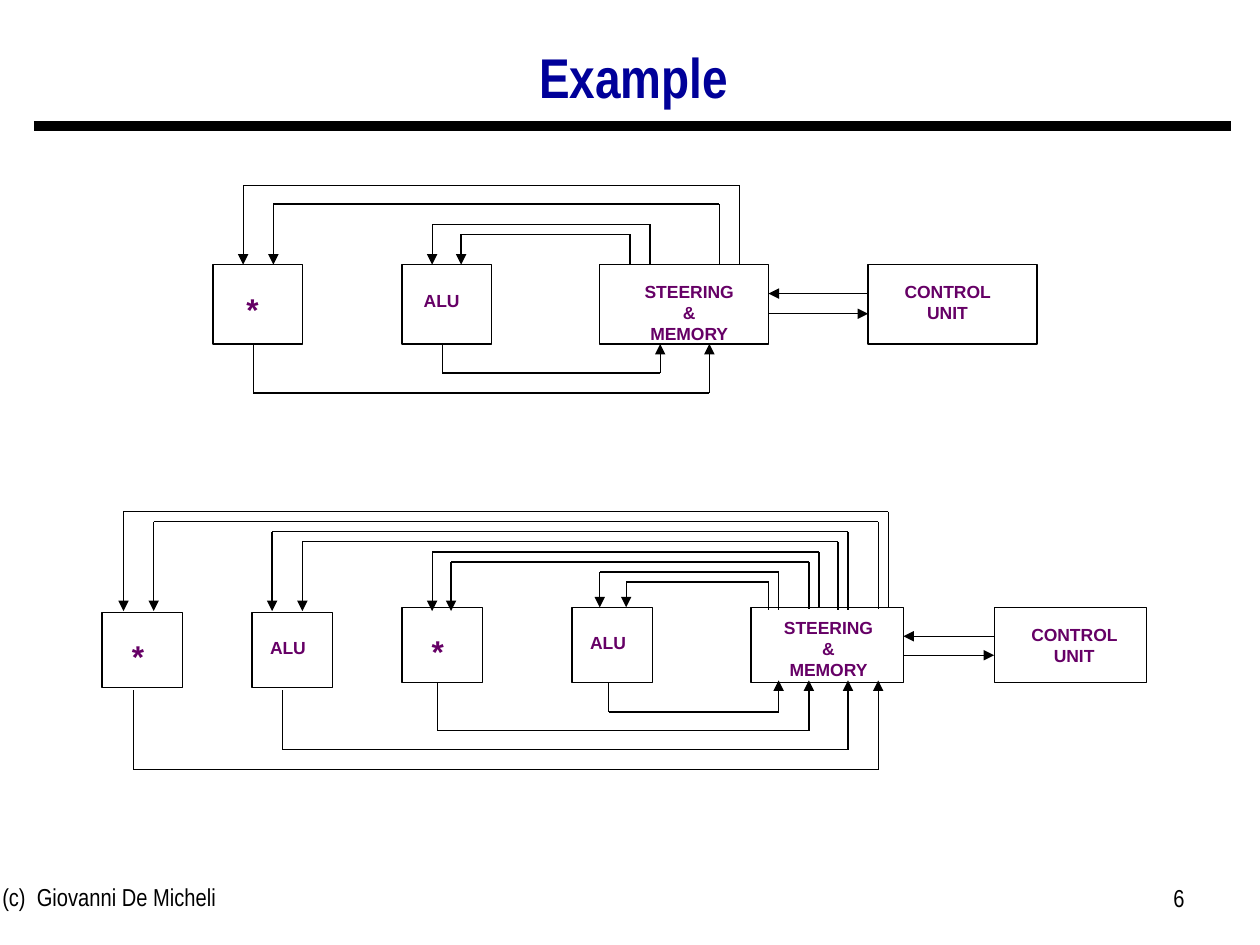
from dataclasses import dataclass
from pptx import Presentation
from pptx.dml.color import RGBColor
from pptx.enum.shapes import MSO_CONNECTOR as Connector, MSO_SHAPE as Shape
from pptx.enum.text import MSO_ANCHOR as Anchor, PP_ALIGN as Align
from pptx.oxml.ns import qn
from pptx.util import Inches, Pt
from lxml.etree import SubElement


@dataclass(frozen=True)
class Theme:
    ink: str = "000000"
    title: str = "000099"
    label: str = "660066"
    heading_font: str = "Arial Narrow"
    label_font: str = "Arial"
    title_size: int = 32
    footer_size: int = 14
    wire: float = 0.75
    rule: float = 6


THEME = Theme()

LABELS = {
    "*": (18, 0.4),
    "ALU": (10, 0.27),
    "STEERING & MEMORY": (10, 0.6),
    "CONTROL UNIT": (10, 0.43),
}

# label, block (left, top, width, height), label (left, top, width)
BLOCKS = [
    ("*", (1.69, 2.1, 0.71, 0.63), (1.69, 2.25, 0.63)),
    ("ALU", (3.19, 2.1, 0.71, 0.63), (3.11, 2.25, 0.79)),
    ("STEERING & MEMORY", (4.76, 2.1, 1.34, 0.63), (5, 2.18, 0.94)),
    ("CONTROL UNIT", (6.89, 2.1, 1.34, 0.63), (7.05, 2.18, 0.94)),
    ("*", (0.81, 4.86, 0.64, 0.6), (0.81, 5.01, 0.57)),
    ("ALU", (2, 4.86, 0.64, 0.6), (1.93, 5.01, 0.71)),
    ("*", (3.19, 4.82, 0.64, 0.6), (3.19, 4.97, 0.57)),
    ("ALU", (4.54, 4.82, 0.64, 0.6), (4.47, 4.97, 0.71)),
    ("STEERING & MEMORY", (5.96, 4.82, 1.21, 0.6), (6.1, 4.85, 0.95)),
    ("CONTROL UNIT", (7.89, 4.82, 1.21, 0.6), (8.03, 4.9, 0.99)),
]

ROUTES = [
    ((5.87, 2.1), 1.47, (1.93, 2.1)),
    ((5.71, 2.1), 1.62, (2.17, 2.1)),
    ((5.16, 2.1), 1.78, (3.43, 2.1)),
    ((5, 2.1), 1.86, (3.66, 2.1)),
    ((3.51, 2.73), 2.96, (5.24, 2.73)),
    ((2.01, 2.73), 3.12, (5.63, 2.73)),
    ((7.05, 4.82), 4.06, (0.98, 4.85)),
    ((6.97, 4.83), 4.14, (1.22, 4.85)),
    ((6.73, 4.84), 4.22, (2.16, 4.85)),
    ((6.65, 4.84), 4.3, (2.4, 4.85)),
    ((6.5, 4.82), 4.38, (3.43, 4.85)),
    ((6.42, 4.83), 4.46, (3.58, 4.85)),
    ((6.18, 4.84), 4.54, (4.76, 4.82)),
    ((6.1, 4.84), 4.62, (4.97, 4.82)),
    ((4.83, 5.42), 5.65, (6.18, 5.4)),
    ((3.47, 5.42), 5.8, (6.42, 5.4)),
    ((2.24, 5.48), 5.95, (6.73, 5.4)),
    ((1.06, 5.48), 6.11, (6.97, 5.4)),
]

CONTROL_ARROWS = [
    ((6.89, 2.33), (6.1, 2.33)),
    ((6.1, 2.49), (6.89, 2.49)),
    ((7.89, 5.05), (7.17, 5.05)),
    ((7.17, 5.2), (7.89, 5.2)),
]


def add_text(slide, text, box, *, size, font, color, bold=False,
             align=Align.LEFT, anchor=Anchor.TOP, spacing=None):
    frame = slide.shapes.add_textbox(*map(Inches, box)).text_frame
    frame.word_wrap = True
    frame.vertical_anchor = anchor
    paragraph = frame.paragraphs[0]
    paragraph.alignment = align
    paragraph.line_spacing = spacing
    run = paragraph.add_run()
    run.text = text
    run.font.name = font
    run.font.size = Pt(size)
    run.font.bold = bold
    run.font.color.rgb = RGBColor.from_string(color)


def add_line(slide, start, end, width=THEME.wire, arrow=False):
    connector = slide.shapes.add_connector(
        Connector.STRAIGHT, *map(Inches, (*start, *end)))
    connector.line.color.rgb = RGBColor.from_string(THEME.ink)
    connector.line.width = Pt(width)
    if arrow:
        SubElement(connector.line._get_or_add_ln(), qn("a:tailEnd"), type="triangle")
    SubElement(connector._element.spPr, qn("a:effectLst"))


def add_route(slide, start, bus, end):
    first, last = (start[0], bus), (end[0], bus)
    add_line(slide, start, first)
    add_line(slide, first, last)
    add_line(slide, last, end, arrow=True)


def add_block(slide, label, box, label_box):
    block = slide.shapes.add_shape(Shape.RECTANGLE, *map(Inches, box))
    block.shadow.inherit = False
    block.fill.background()
    block.line.color.rgb = RGBColor.from_string(THEME.ink)
    block.line.width = Pt(THEME.wire)
    size, height = LABELS[label]
    add_text(slide, label, (*label_box, height), size=size,
             font=THEME.label_font, color=THEME.label, bold=True, align=Align.CENTER)


def main():
    presentation = Presentation()
    presentation.slide_width, presentation.slide_height = Inches(10), Inches(7.5)
    slide = presentation.slides.add_slide(presentation.slide_layouts[6])

    add_line(slide, (0.27, 1), (9.77, 1), width=THEME.rule)
    footer = dict(size=THEME.footer_size, font=THEME.heading_font, color=THEME.ink)
    add_text(slide, "(c)  Giovanni De Micheli", (-0.08, 6.95, 3.17, 0.52), **footer)
    add_text(slide, "6", (7.17, 6.96, 2.33, 0.52), align=Align.RIGHT, **footer)
    add_text(slide, "Example", (0.78, 0.19, 8.5, 0.89), size=THEME.title_size,
             font=THEME.heading_font, color=THEME.title, bold=True,
             align=Align.CENTER, anchor=Anchor.MIDDLE, spacing=0.9)

    for block in BLOCKS:
        add_block(slide, *block)
    for route in ROUTES:
        add_route(slide, *route)
    for start, end in CONTROL_ARROWS:
        add_line(slide, start, end, arrow=True)

    presentation.save("out.pptx")


if __name__ == "__main__":
    main()
